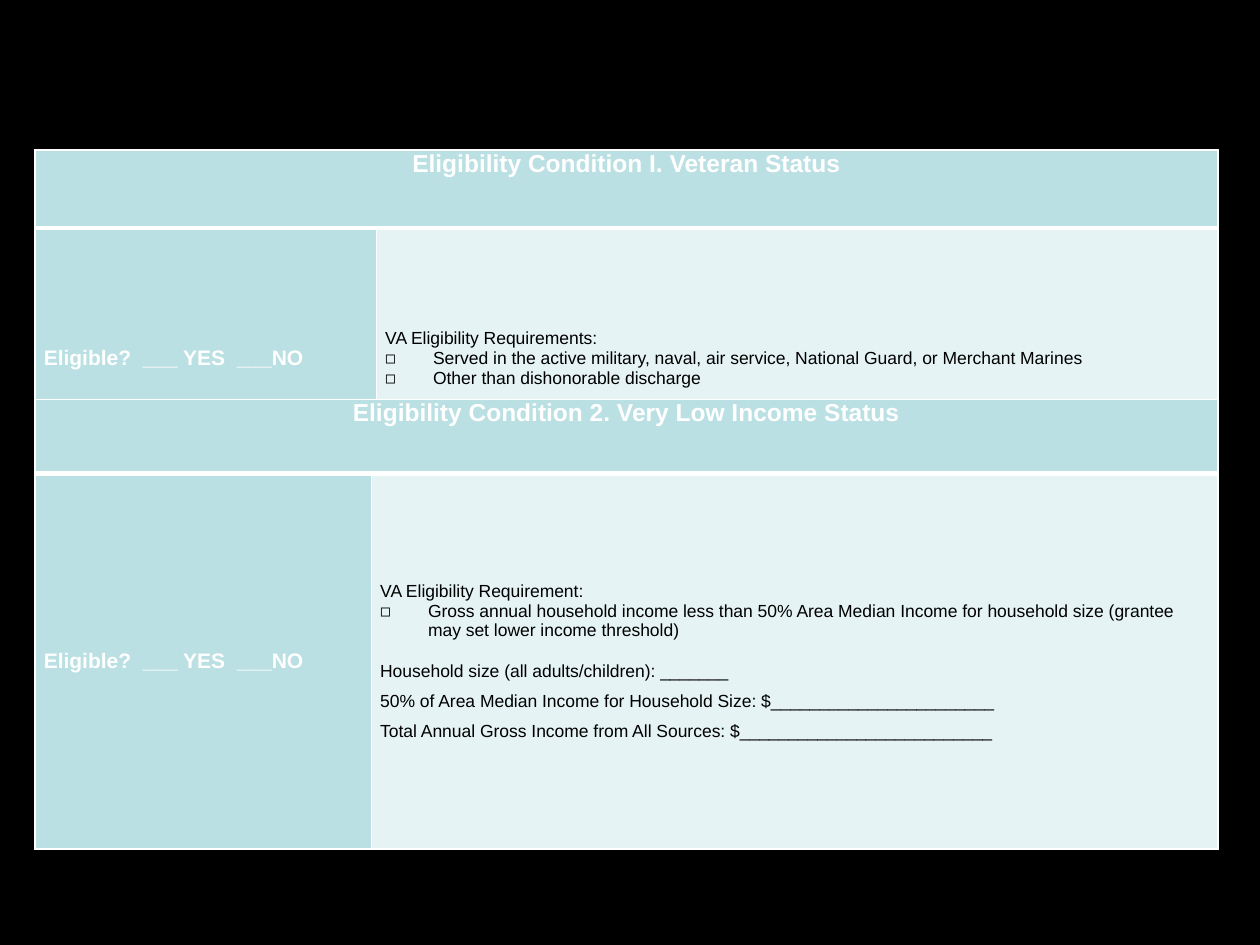
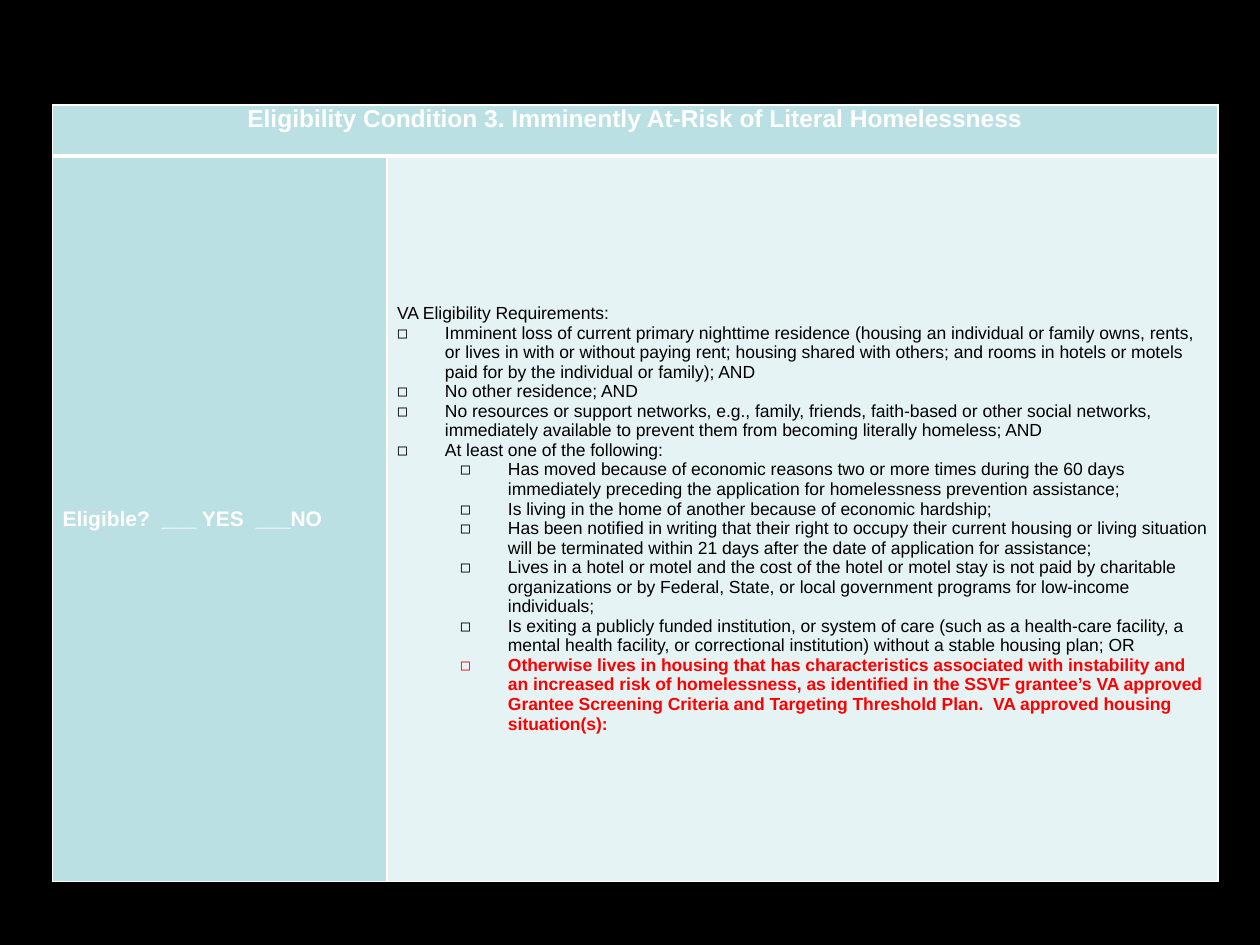
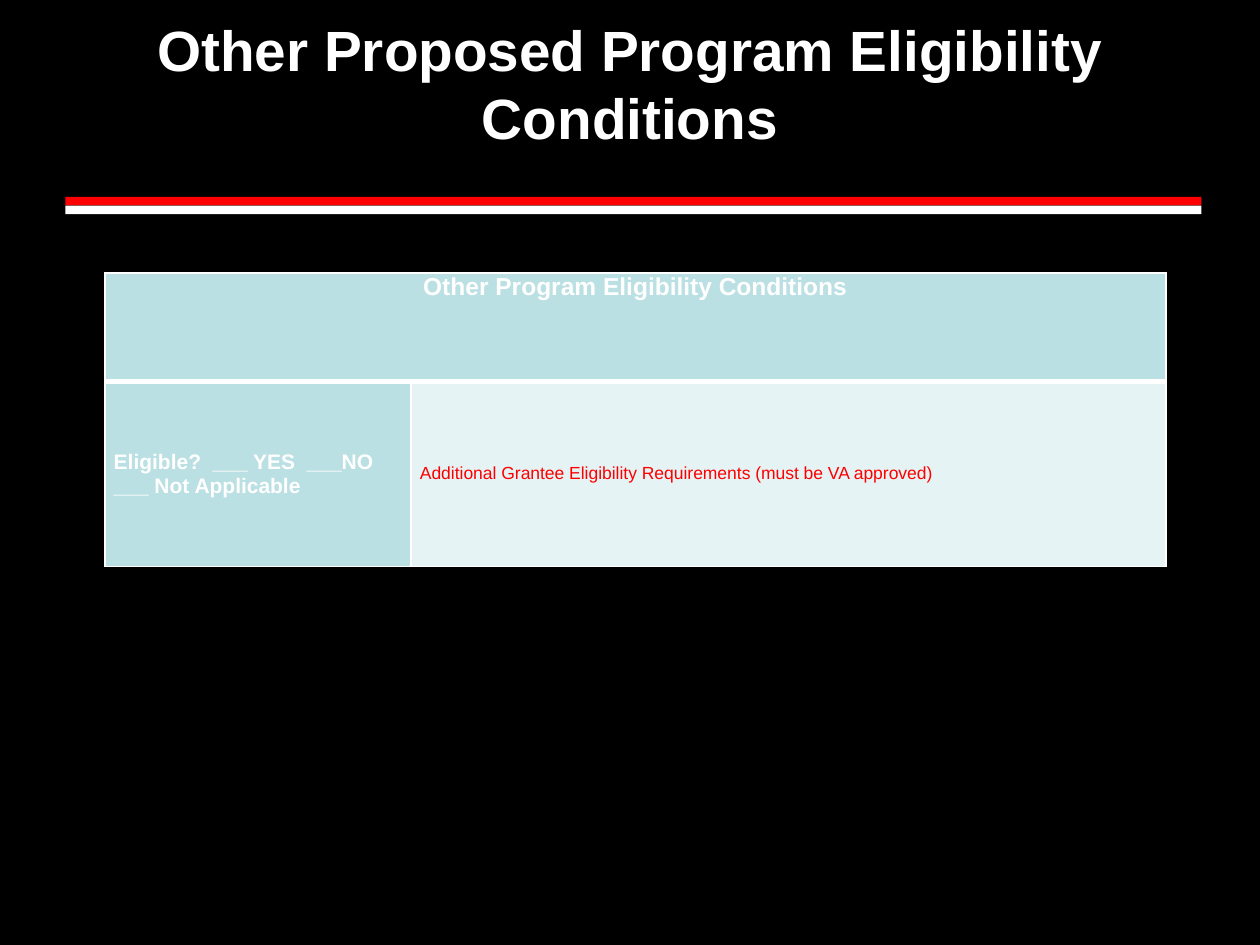
"""Build three slides of veteran eligibility tables on a black ground."""
from lxml import etree
from pptx import Presentation
from pptx.dml.color import RGBColor
from pptx.enum.shapes import MSO_SHAPE
from pptx.enum.text import MSO_ANCHOR, PP_ALIGN
from pptx.oxml.ns import qn
from pptx.util import Inches, Pt

RECT = MSO_SHAPE.RECTANGLE
TOP, MID = MSO_ANCHOR.TOP, MSO_ANCHOR.MIDDLE
LEFT, MIDDLE = PP_ALIGN.LEFT, PP_ALIGN.CENTER

INK = {"back": "000000", "text": "000000", "white": "FFFFFF",
       "red": "FF0000", "head": "BBE0E3", "pale": "E5F3F4"}
FONT = "Arial"
HEAD = {"size": 14, "bold": True, "ink": "white", "align": MIDDLE}
SIDE = {"size": 12, "bold": True, "ink": "white"}
BODY = {"size": 10, "bold": False, "ink": "text"}
TITLE = {**HEAD, "size": 32.4}
BOX = {"bullet": 0.38}
SUB = {"bullet": 0.88, "level": 1}
GAP = {"after": 6}
ASK = "Eligible?  ___ YES  ___NO"

deck = Presentation()
deck.slide_width, deck.slide_height = Inches(10), Inches(7.5)
UNIT = deck.slide_width / 100


def write(frame, lines, base):
    """Fill a text frame with (text, format) lines over a base format."""
    for i, (text, more) in enumerate(lines):
        look = {**base, **more}
        para = frame.paragraphs[0] if i == 0 else frame.add_paragraph()
        run = para.add_run()
        run.text = text
        for name, value in {"name": FONT, "size": Pt(look["size"]),
                            "bold": look["bold"]}.items():
            setattr(run.font, name, value)
        run.font.color.rgb = RGBColor.from_string(INK[look["ink"]])
        for name, value in {"alignment": look.get("align", LEFT),
                            "level": look.get("level", 0),
                            "space_before": Pt(look.get("before", 0)),
                            "space_after": Pt(look.get("after", 0))}.items():
            setattr(para, name, value)
        if "bullet" in look:
            props = para._p.get_or_add_pPr()
            props.set("marL", str(Inches(look["bullet"])))
            props.set("indent", str(Inches(-0.38)))
            etree.SubElement(props, qn("a:buFont"), typeface=FONT)
            etree.SubElement(props, qn("a:buChar"), char="◻")


def edge(cell, widths):
    """Draw white cell borders, given each side's width in points."""
    props = cell._tc.get_or_add_tcPr()
    for side, width in widths.items():
        line = etree.SubElement(props, qn("a:ln" + side), w=str(Pt(width)))
        fill = etree.SubElement(line, qn("a:solidFill"))
        etree.SubElement(fill, qn("a:srgbClr"), val=INK["white"])


VET = [("VA Eligibility Requirements:", {}),
       ("Served in the active military, naval, air service, National Guard, or Merchant Marines", BOX),
       ("Other than dishonorable discharge", BOX)]
PAY = [("VA Eligibility Requirement:", {}),
       ("Gross annual household income less than 50% Area Median Income for household size "
        "(grantee may set lower income threshold)", BOX),
       ("Household size (all adults/children): _______", {**GAP, "before": 12}),
       ("50% of Area Median Income for Household Size: $_______________________", GAP),
       ("Total Annual Gross Income from All Sources: $__________________________", {})]
RISK = [("VA Eligibility Requirements:", {}),
        ("Imminent loss of current primary nighttime residence (housing an individual or family "
         "owns, rents, or lives in with or without paying rent; housing shared with others; and "
         "rooms in hotels or motels paid for by the individual or family); AND", BOX),
        ("No other residence; AND", BOX),
        ("No resources or support networks, e.g., family, friends, faith-based or other social "
         "networks, immediately available to prevent them from becoming literally homeless; AND", BOX),
        ("At least one of the following:", BOX),
        ("Has moved because of economic reasons two or more times during the 60 days immediately "
         "preceding the application for homelessness prevention assistance;", SUB),
        ("Is living in the home of another because of economic hardship;", SUB),
        ("Has been notified in writing that their right to occupy their current housing or living "
         "situation will be terminated within 21 days after the date of application for "
         "assistance;", SUB),
        ("Lives in a hotel or motel and the cost of the hotel or motel stay is not paid by "
         "charitable organizations or by Federal, State, or local government programs for "
         "low-income individuals;", SUB),
        ("Is exiting a publicly funded institution, or system of care (such as a health-care "
         "facility, a mental health facility, or correctional institution) without a stable "
         "housing plan; OR", SUB),
        ("Otherwise lives in housing that has characteristics associated with instability and an "
         "increased risk of homelessness, as identified in the SSVF grantee’s VA approved Grantee "
         "Screening Criteria and Targeting Threshold Plan.  VA approved housing situation(s):",
         {**SUB, "ink": "red", "bold": True})]
MORE = [("Additional Grantee Eligibility Requirements (must be VA approved)", {"ink": "red"})]

PAGES = [
    {"grids": [
        {"at": (2.78, 11.9), "cols": (27.1, 66.8), "rows": (6.2, 20.7), "pad": 0.07,
         "head": "Eligibility Condition I. Veteran Status", "side": [ASK], "body": VET},
        {"at": (2.78, 31.7), "cols": (26.7, 67.2), "rows": (5.9, 29.8), "pad": 0.07,
         "head": "Eligibility Condition 2. Very Low Income Status", "side": [ASK], "body": PAY}]},
    {"grids": [
        {"at": (4.17, 8.33), "cols": (26.55, 65.95), "rows": (4.05, 57.6), "pad": 0.08,
         "head": "Eligibility Condition 3. Imminently At-Risk of Literal Homelessness",
         "side": [ASK], "body": RISK}]},
    {"title": "Other Proposed Program Eligibility Conditions", "grids": [
        {"at": (8.33, 21.67), "cols": (24.3, 59.9), "rows": (8.6, 14.7), "pad": 0.07,
         "head": "Other Program Eligibility Conditions",
         "side": [ASK, "___ Not Applicable"], "body": MORE}]},
]

for page in PAGES:
    slide = deck.slides.add_slide(deck.slide_layouts[6])
    slide.background.fill.solid()
    slide.background.fill.fore_color.rgb = RGBColor.from_string(INK["back"])

    for i, ink in enumerate(("red", "white")):
        band = slide.shapes.add_shape(
            RECT, *(int(n * UNIT) for n in (5.2, 15.63 + 0.68 * i, 90.15, 0.68)))
        band.shadow.inherit = False
        band.fill.solid()
        band.fill.fore_color.rgb = RGBColor.from_string(INK[ink])
        band.line.fill.background()

    if "title" in page:
        frame = slide.shapes.add_textbox(
            *(int(n * UNIT) for n in (5, 3, 90, 12.5))).text_frame
        for name, value in {"word_wrap": True, "vertical_anchor": MID,
                            "margin_bottom": Inches(0.58)}.items():
            setattr(frame, name, value)
        write(frame, [(page["title"], {})], TITLE)

    for grid in page["grids"]:
        size = (sum(grid["cols"]), sum(grid["rows"]))
        table = slide.shapes.add_table(
            2, 2, *(int(n * UNIT) for n in grid["at"] + size)).table
        table.first_row = table.horz_banding = False
        for i in range(2):
            table.columns[i].width = int(grid["cols"][i] * UNIT)
            table.rows[i].height = int(grid["rows"][i] * UNIT)
        table.cell(0, 0).merge(table.cell(0, 1))

        for row in range(2):
            for col in range(2):
                cell = table.cell(row, col)
                edge(cell, {"L": 1, "R": 1, "T": 3 if row else 1, "B": 1 if row else 3})
                cell.fill.solid()
                shade = INK["pale" if row and col else "head"]
                cell.fill.fore_color.rgb = RGBColor.from_string(shade)
                pad = Inches(grid["pad"])
                for name, value in {"margin_left": pad, "margin_right": pad,
                                    "margin_top": 0, "margin_bottom": 0,
                                    "vertical_anchor": MID if row else TOP}.items():
                    setattr(cell, name, value)

        write(table.cell(0, 0).text_frame, [(grid["head"], {})], HEAD)
        write(table.cell(1, 0).text_frame, [(text, {}) for text in grid["side"]], SIDE)
        write(table.cell(1, 1).text_frame, grid["body"], BODY)

deck.save("out.pptx")
